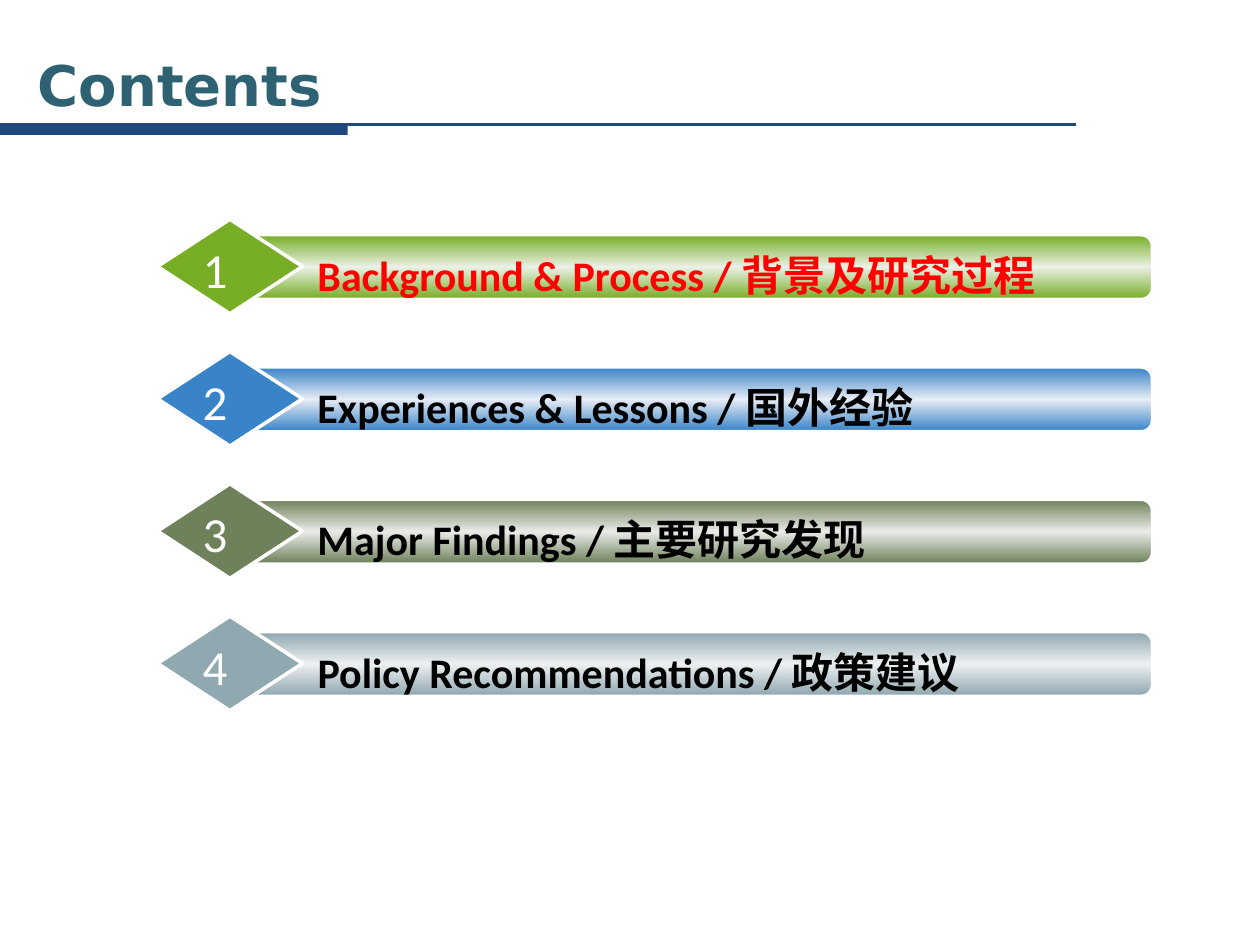
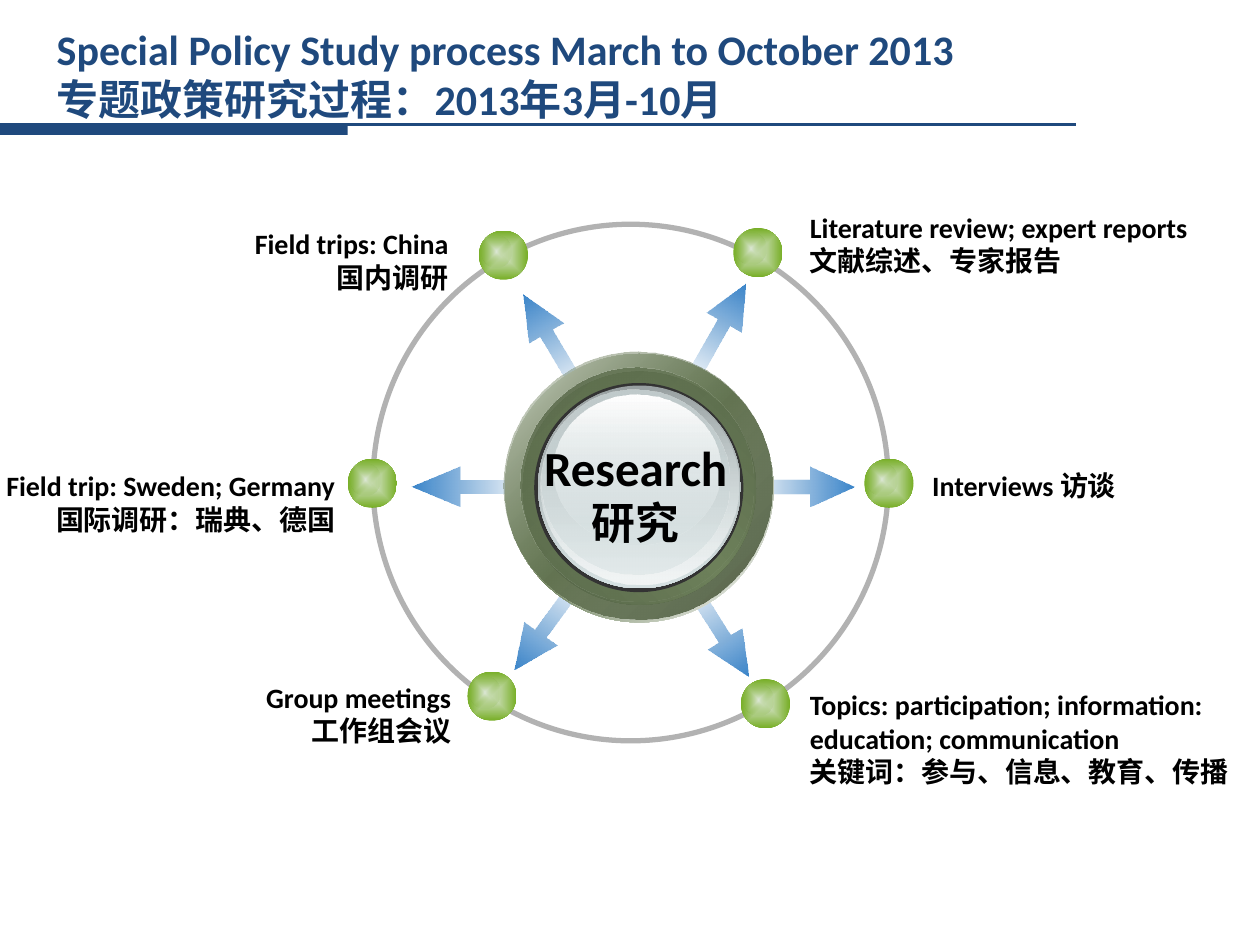
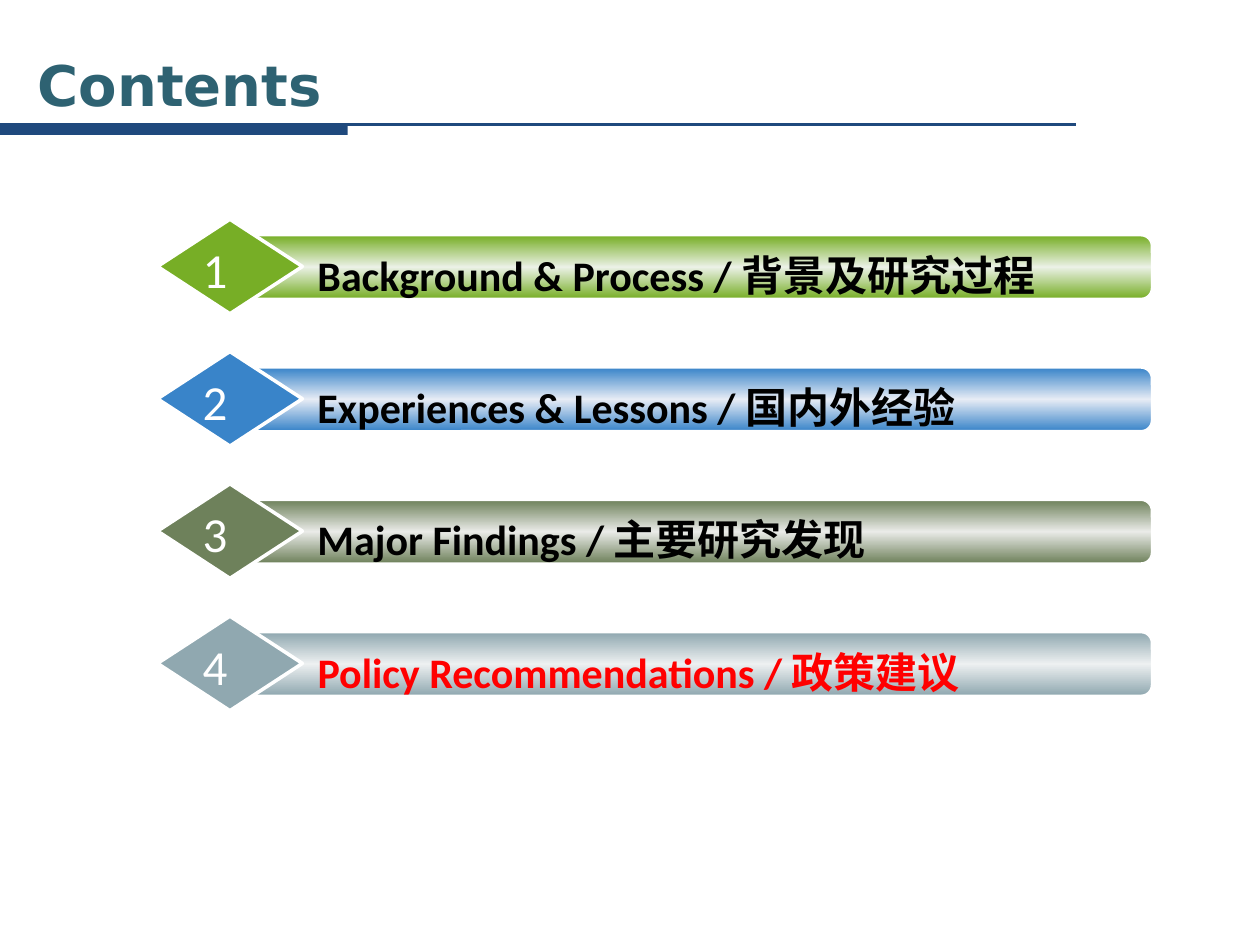
"""Build the contents and study process slides."""
from pptx import Presentation
from pptx import util as u
from pptx.dml.color import RGBColor
from pptx.enum import shapes, text
from pptx.oxml import parse_xml
from pptx.oxml.ns import nsdecls, qn

COLS, ROWS = 10, 7.5
CELL = u.Inches(1)
NAVY, TEAL, BLACK, WHITE, RED = "1F497D", "2E6272", "000000", "FFFFFF", "FF0000"
GREEN, BLUE, OLIVE, MIST = "77AE26", "3984C9", "6E815B", "90A8B0"
LATIN, HAN, HEAD = "Calibri", "Noto Sans CJK SC", "DejaVu Sans"
KIND = shapes.MSO_SHAPE
LEFT, MID, RIGHT = text.PP_ALIGN.LEFT, text.PP_ALIGN.CENTER, text.PP_ALIGN.RIGHT

ITEMS = [
    ("Background & Process / ", "背景及研究过程", GREEN, "EBF1E6", 6.87),
    ("Experiences & Lessons / ", "国外经验", BLUE, "E7ECF5", 6.64),
    ("Major Findings / ", "主要研究发现", OLIVE, "EAEBE8", 5.73),
    ("Policy Recommendations / ", "政策建议", MIST, "EDF0F1", 6.48),
]
ARROWS = [
    (5.27, 2.47, 0.87, 299.6), (5.27, 4.84, 0.87, 57.8), (3.94, 2.55, 0.87, 239.5),
    (3.9, 4.8, 0.87, 125.6), (5.91, 3.7, 0.87, 0), (3.27, 3.7, 0.94, 180),
]
BALLS = [(3.8, 1.83), (2.76, 3.64), (3.71, 5.33), (5.82, 1.81), (6.86, 3.64), (5.88, 5.39)]
RINGS = [
    ((4.01, 2.81, 2.13, 2.13), [(0, WHITE), (50, OLIVE), (100, WHITE)], 45),
    ((4, 2.79, 2.13, 2.13), [(0, OLIVE, 32), (100, "4F5C41")], 45),
    ((4.15, 2.95, 1.85, 1.85), [(0, "546346"), (50, OLIVE), (100, "546346")], 315),
    ((4.13, 2.92, 1.85, 1.85), [(0, "5A6A4B"), (100, OLIVE, 0)], 45),
    ((4.24, 3.04, 1.66, 1.66), "333333", 0),
    ((4.27, 3.06, 1.61, 1.61), [(0, "99A1A2"), (100, "D6E1E2")], 90),
    ((4.29, 3.07, 1.57, 1.57), [(0, "D6E1E2", 0), (100, "F2F5F5")], 90),
    ((4.3, 3.09, 1.49, 1.47), [(0, "C1CBCC"), (100, "D6E1E2", 48)], 90),
    ((4.39, 3.13, 1.33, 1.19), [(0, WHITE), (100, "D6E1E2", 38)], 90),
]
LABELS = [
    ((6.33, 1.62, 3.23, 0.64), ["Literature review; expert reports", "文献综述、专家报告"], LEFT, False),
    ((1.9, 1.75, 1.76, 0.64), ["Field trips: China", "国内调研"], RIGHT, False),
    ((7.3, 3.67, 1.68, 0.37), ["Interviews 访谈"], LEFT, True),
    ((6.33, 5.41, 3.67, 0.91),
     ["Topics: participation; information: education; communication",
      "关键词：参与、信息、教育、传播"], LEFT, True),
    ((-0.08, 3.67, 2.84, 0.64), ["Field trip: Sweden; Germany", "国际调研：瑞典、德国"], RIGHT, False),
    ((1.94, 5.35, 1.74, 0.64), ["Group meetings", "工作组会议"], RIGHT, False),
]


def grid(*cells):
    """Turn counts of grid cells into lengths."""
    return [u.Emu(round(n * CELL)) for n in cells]


def tint(code):
    """Turn a hex string into a colour."""
    return RGBColor.from_string(code)


def blend(shape, stops, angle):
    """Fill a shape with a linear blend, or a centred one without an angle."""
    marks = "".join(
        f'<a:gs pos="{pos * 1000}"><a:srgbClr val="{code}">'
        + "".join(f'<a:alpha val="{a * 1000}"/>' for a in alpha)
        + "</a:srgbClr></a:gs>" for pos, code, *alpha in stops)
    if angle is None:
        way = '<a:path path="shape"><a:fillToRect l="50000" t="50000" r="50000" b="50000"/></a:path>'
    else:
        way = f'<a:lin ang="{angle * 60000}" scaled="0"/>'
    shape.fill.background()
    props = shape.element.spPr
    props.replace(props.find(qn("a:noFill")), parse_xml(
        f'<a:gradFill {nsdecls("a")} rotWithShape="1"><a:gsLst>{marks}</a:gsLst>{way}</a:gradFill>'))


def draw(slide, kind, place, fill=None, angle=None, line=None, width=1, adjust=()):
    """Add a preset shape with a plain, blended or empty fill."""
    shape = slide.shapes.add_shape(kind, *grid(*place))
    shape.shadow.inherit = False
    for i, share in enumerate(adjust):
        shape.adjustments[i] = share
    if isinstance(fill, list):
        blend(shape, fill, angle)
    elif fill:
        shape.fill.solid()
        shape.fill.fore_color.rgb = tint(fill)
    else:
        shape.fill.background()
    if line:
        shape.line.color.rgb = tint(line)
        shape.line.width = u.Pt(width)
    else:
        shape.line.fill.background()
    return shape


def style(run, size, color, bold=True, face=LATIN):
    """Format one run."""
    font = run.font
    font.size, font.bold, font.name = u.Pt(size), bold, face
    font.color.rgb = tint(color)
    run.font._element.append(parse_xml(f'<a:ea {nsdecls("a")} typeface="{HAN}"/>'))


def write(slide, place, lines, size, color=BLACK, align=LEFT, bold=True, wrap=False):
    """Add a text box with one paragraph a line."""
    box = slide.shapes.add_textbox(*grid(*place))
    frame = box.text_frame
    frame.text = "\n".join(lines)
    frame.word_wrap = wrap
    frame.auto_size = text.MSO_AUTO_SIZE.SHAPE_TO_FIT_TEXT
    for para in frame.paragraphs:
        para.alignment = align
        for run in para.runs:
            style(run, size, color, bold)
    return frame


def title(slide, place, lines, size, color, face=LATIN):
    """Place and format the slide title."""
    head = slide.shapes.title
    head.left, head.top, head.width, head.height = grid(*place)
    frame = head.text_frame
    frame.text = "\n".join(lines)
    frame.word_wrap = True
    frame.auto_size = text.MSO_AUTO_SIZE.NONE
    frame.vertical_anchor = text.MSO_ANCHOR.MIDDLE
    for para in frame.paragraphs:
        para.alignment = LEFT
        for run in para.runs:
            style(run, size, color, face=face)


def band(slide):
    """Put the rule and bar under the title into the slide's layout."""
    rule = slide.shapes.add_connector(shapes.MSO_CONNECTOR.STRAIGHT, *grid(0, 0.99, 8.54, 0.99))
    rule.line.color.rgb = tint(NAVY)
    rule.line.width = u.Pt(1.5)
    rule.element.spPr.append(parse_xml(f'<a:effectLst {nsdecls("a")}/>'))
    bar = draw(slide, KIND.RECTANGLE, (0, 0.99, 2.76, 0.08), NAVY)
    for part in (rule, bar):
        slide.slide_layout.shapes.element.append(part.element)


def entry(slide, row, item, color):
    """Draw one numbered bar of the contents."""
    name, han, dark, pale, wide = item
    top = 1.74 + 1.05 * row
    draw(slide, KIND.ROUNDED_RECTANGLE, (1.89, top + 0.13, 7.25, 0.5),
         [(0, dark), (50, pale), (100, dark)], 90, WHITE, 1, [0.167])
    draw(slide, KIND.DIAMOND, (1.25, top, 1.15, 0.75), dark, line=WHITE, width=2)
    frame = write(slide, (2.27, top + 0.19, wide, 0.51), [name], 24, color, wrap=True)
    frame.margin_left = u.Inches(0.25)
    run = frame.paragraphs[0].add_run()
    run.text = han
    style(run, 24, color, face=HAN)
    write(slide, (1.51, top + 0.11, 0.4, 0.57), [str(row + 1)], 28, WHITE, bold=False)


def contents(slide, items, now):
    """Draw the contents with the current row in red."""
    title(slide, (0.2, 0.36, 8.42, 0.62), ["Contents"], 32, TEAL, HEAD)
    for row, item in enumerate(items):
        entry(slide, row, item, RED if row == now else BLACK)


def ball(slide, x, y):
    """Draw one glossy ball on the orbit."""
    draw(slide, KIND.OVAL, (x, y, 0.39, 0.39), [(0, "DDE8D6"), (100, GREEN)])
    draw(slide, KIND.OVAL, (x + 0.02, y + 0.04, 0.24, 0.25), [(0, "DDE8D6"), (100, GREEN, 0)])


def process(slide):
    """Draw the research hub with its six activities."""
    title(slide, (0.35, 0, 8.81, 1.17),
          ["Special Policy Study process March to October 2013",
           "专题政策研究过程：2013年3月-10月"], 24, NAVY)
    for x, y, wide, turn in ARROWS:
        arrow = draw(slide, KIND.RIGHT_ARROW, (x, y, wide, 0.32),
                     [(0, "367DBF", 0), (100, BLUE)], 0, adjust=[0.352, 1.11 * wide / 0.87])
        arrow.rotation = turn
    draw(slide, KIND.OVAL, (2.96, 1.78, 4.09, 4.1), line="B2B2B2", width=3)
    for spot in BALLS:
        ball(slide, *spot)
    for place, fill, angle in RINGS:
        draw(slide, KIND.OVAL, place, fill, angle)
    hub = write(slide, (4.21, 3.42, 1.67, 1.04), ["Research", "研究"], 28, align=MID)
    hub.paragraphs[1].runs[0].font.size = u.Pt(25)
    for place, lines, align, wrap in LABELS:
        write(slide, place, lines, 16, align=align, wrap=wrap)


def main():
    """Build and save the slides."""
    deck = Presentation()
    deck.slide_width, deck.slide_height = grid(COLS, ROWS)
    first, second, third = [deck.slides.add_slide(deck.slide_layouts[5]) for _ in range(3)]
    band(first)
    contents(first, ITEMS, 0)
    process(second)
    late = list(ITEMS)
    late[1] = (ITEMS[1][0], "国内外经验", *ITEMS[1][2:])
    contents(third, late, 3)
    deck.save("out.pptx")


if __name__ == "__main__":
    main()
